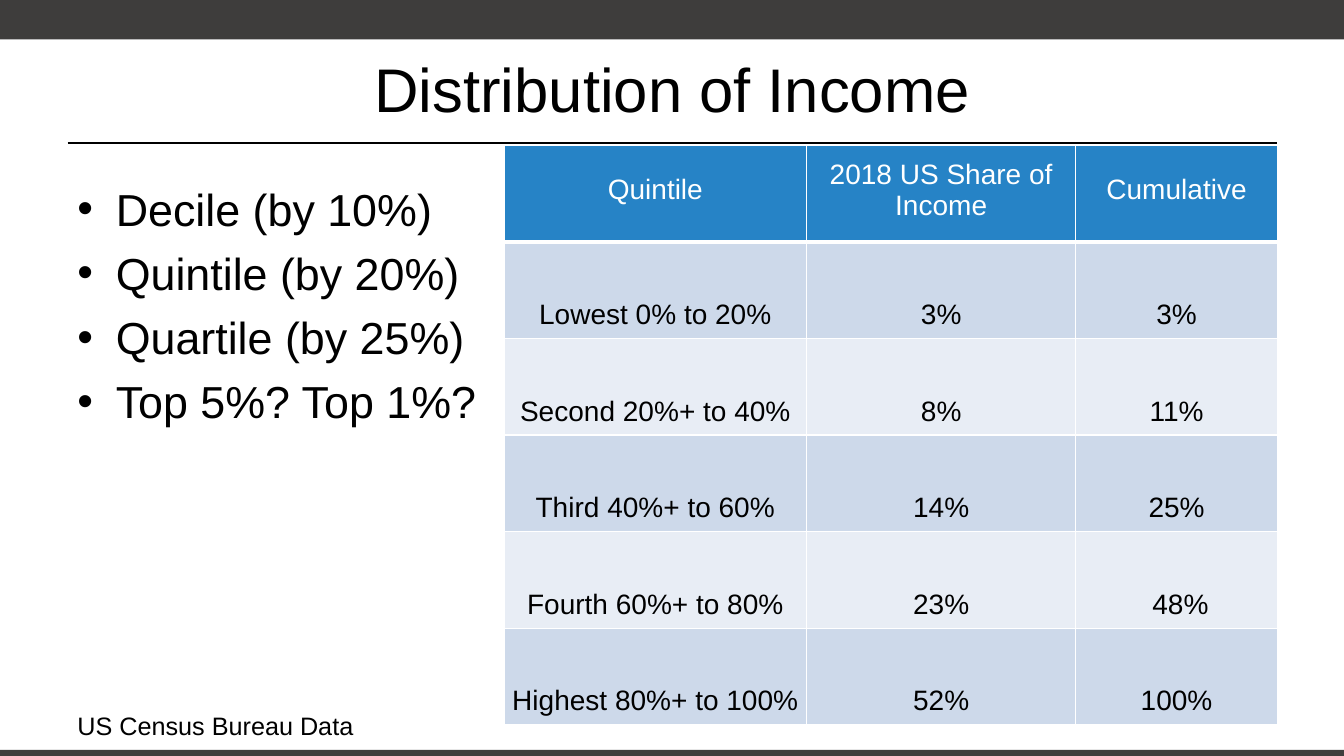
import pptx
import pptx.dml.color
import pptx.enum.shapes
import pptx.enum.text
import pptx.oxml
import pptx.oxml.ns
import pptx.util
from pptx.util import Inches

ANCHOR = pptx.enum.text.MSO_ANCHOR
ALIGN = pptx.enum.text.PP_ALIGN
BAR, HEADER, BANDS = "3E3D3C", "2683C6", ("CDD9EA", "E8EDF5")
MEASURES = ["Decile (by 10%)", "Quintile (by 20%)", "Quartile (by 25%)", "Top 5%? Top 1%?"]
COLUMN_WIDTHS = [3, 2.67, 2]
INCOME_ROWS = [
    ("Quintile", "2018 US Share of Income", "Cumulative"),
    ("Lowest 0% to 20%", "3%", "3%"),
    ("Second 20%+ to 40%", "8%", "11%"),
    ("Third 40%+ to 60%", "14%", "25%"),
    ("Fourth 60%+ to 80%", "23%", " 48%"),
    ("Highest 80%+ to 100%", "52%", "100%"),
]


def rgb(color):
    """Turn a hex string into a colour."""
    return pptx.dml.color.RGBColor.from_string(color)


def add_xml(parent, xml):
    """Append a DrawingML element to a parent."""
    ns = pptx.oxml.ns.nsdecls("a")
    parent.append(pptx.oxml.parse_xml(xml.replace(">", f" {ns}>", 1)))


def write(tf, text, size=20, color="000000", align=ALIGN.LEFT, bullet=False, before=0):
    """Fill a text frame, one paragraph for each line of text."""
    for i, line in enumerate(text.split("\n")):
        p = tf.add_paragraph() if i else tf.paragraphs[0]
        p.alignment = align
        p.space_before = pptx.util.Pt(before)
        r = p.add_run()
        r.text = line
        r.font.name, r.font.size, r.font.bold = "Arial", pptx.util.Pt(size), False
        r.font.color.rgb = rgb(color)
        if bullet:
            pPr = p._p.get_or_add_pPr()
            pPr.set("marL", str(Inches(0.38)))
            pPr.set("indent", str(-Inches(0.38)))
            add_xml(pPr, '<a:buFont typeface="Arial"></a:buFont>')
            add_xml(pPr, '<a:buChar char="•"></a:buChar>')


def add_text(s, x, y, w, h, text, anchor=ANCHOR.TOP, wrap=True, **fmt):
    """Add a text box."""
    tf = s.shapes.add_textbox(Inches(x), Inches(y), Inches(w), Inches(h)).text_frame
    tf.word_wrap, tf.vertical_anchor = wrap, anchor
    write(tf, text, **fmt)


def add_bar(s, y, h):
    """Add a dark bar across the slide."""
    rect = pptx.enum.shapes.MSO_SHAPE.RECTANGLE
    sp = s.shapes.add_shape(rect, 0, Inches(y), Inches(13.33), Inches(h))
    sp.shadow.inherit = False
    sp.fill.solid()
    sp.fill.fore_color.rgb = rgb(BAR)
    sp.line.fill.background()


def add_rule(s, x1, x2, y):
    """Add the horizontal line under the title."""
    straight = pptx.enum.shapes.MSO_CONNECTOR.STRAIGHT
    line = s.shapes.add_connector(straight, Inches(x1), Inches(y), Inches(x2), Inches(y))
    line.line.color.rgb = rgb("000000")
    line.line.width = pptx.util.Pt(1.25)
    add_xml(line._element.spPr, "<a:effectLst></a:effectLst>")


def format_cell(cell, text, row):
    """Write, border and fill one table cell."""
    head = row == 0
    tcPr = cell._tc.get_or_add_tcPr()
    widths = {"L": 1, "R": 1, "T": 3 if row == 1 else 1, "B": 3 if head else 1}
    for side, width in widths.items():
        add_xml(tcPr, f'<a:ln{side} w="{pptx.util.Pt(width)}"><a:solidFill>'
                      f'<a:srgbClr val="FFFFFF"/></a:solidFill></a:ln{side}>')
    cell.fill.solid()
    cell.fill.fore_color.rgb = rgb(HEADER if head else BANDS[(row - 1) % 2])
    cell.margin_left = cell.margin_right = cell.margin_top = Inches(0.01)
    cell.margin_bottom = Inches(0.08)
    cell.vertical_anchor = ANCHOR.MIDDLE if head else ANCHOR.BOTTOM
    write(cell.text_frame, text, color="FFFFFF" if head else "000000", align=ALIGN.CENTER)


def add_income_table(s, x, y, w, h):
    """Add the table of income shares by quintile."""
    table = s.shapes.add_table(len(INCOME_ROWS), len(COLUMN_WIDTHS),
                               Inches(x), Inches(y), Inches(w), Inches(h)).table
    for column, width in zip(table.columns, COLUMN_WIDTHS):
        column.width = Inches(width)
    for i, values in enumerate(INCOME_ROWS):
        for j, text in enumerate(values):
            format_cell(table.cell(i, j), text, i)


def main():
    """Build and save the slide."""
    prs = pptx.Presentation()
    prs.slide_width, prs.slide_height = Inches(13.33), Inches(7.5)
    s = prs.slides.add_slide(prs.slide_layouts[6])
    add_bar(s, 0, 0.39)
    add_bar(s, 7.44, 0.1)
    add_rule(s, 0.67, 12.67, 1.42)
    add_text(s, 0.67, 1.75, 4.33, 2.5, "\n".join(MEASURES), size=32, bullet=True, before=7.4)
    add_text(s, 0.67, 0.25, 12, 1.25, "Distribution of Income", size=44,
             anchor=ANCHOR.MIDDLE, align=ALIGN.CENTER)
    add_income_table(s, 5, 1.44, 7.67, 5.75)
    add_text(s, 0.67, 7, 2.96, 0.4, "US Census Bureau Data", size=18, wrap=False)
    prs.save("out.pptx")


if __name__ == "__main__":
    main()
